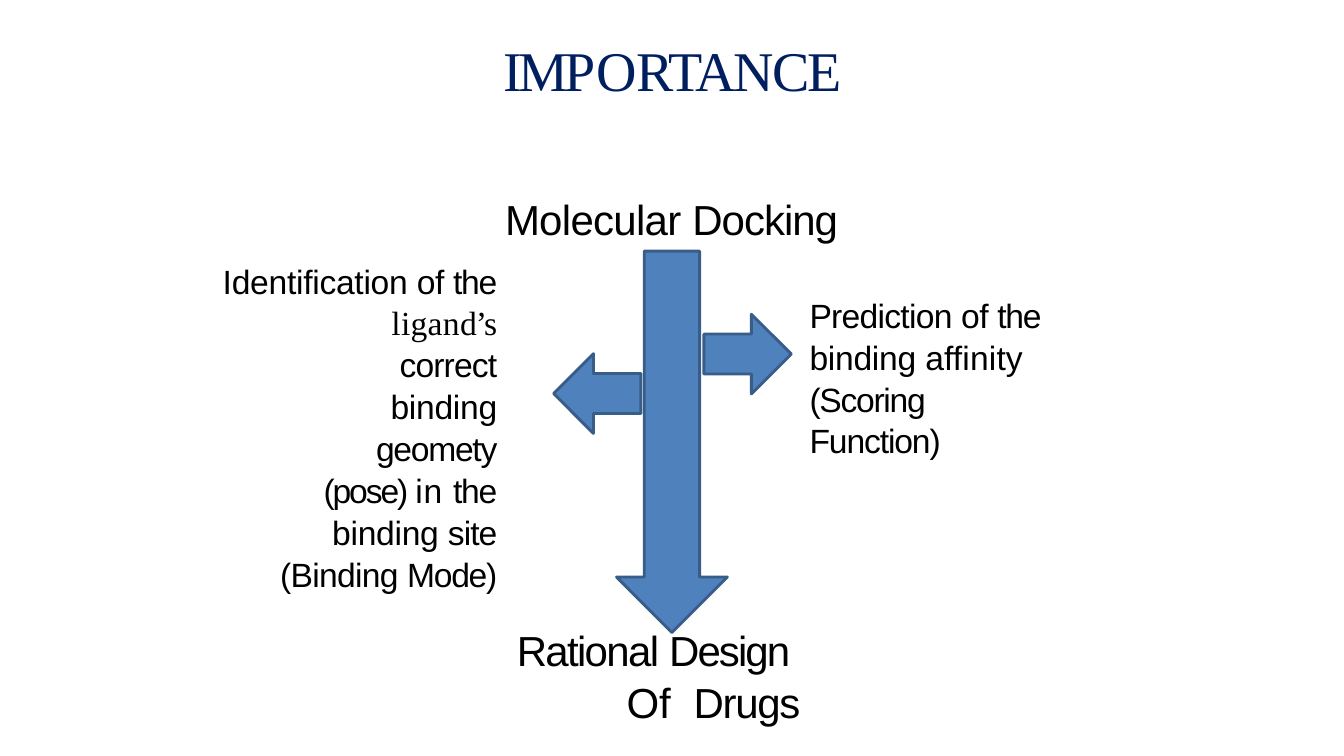
from dataclasses import dataclass

from pptx import Presentation
from pptx import util as u
from pptx.dml.color import RGBColor
from pptx.enum import shapes, text

W, H = u.Inches(13.33), u.Inches(7.5)
COLS, ROWS = 16, 9


@dataclass(frozen=True)
class Theme:
    navy: str = "001F5F"
    black: str = "000000"
    arrow: str = "4F81BC"
    outline: str = "385D89"
    sans: str = "Arial"
    serif: str = "Times New Roman"
    title: int = 40
    heading: int = 30
    body: int = 24


T = Theme()


def grid(col, row, cols, rows):
    """Turn grid columns and rows into left, top, width and height."""
    return (int(W * col / COLS), int(H * row / ROWS),
            int(W * cols / COLS), int(H * rows / ROWS))


def add_arrow(s, kind, place):
    sp = s.shapes.add_shape(kind, *grid(*place))
    sp.shadow.inherit = False
    sp.fill.solid()
    sp.fill.fore_color.rgb = RGBColor.from_string(T.arrow)
    sp.line.color.rgb = RGBColor.from_string(T.outline)
    sp.line.width = u.Pt(2.04)


def add_box(s, place, anchor=text.MSO_ANCHOR.TOP):
    tf = s.shapes.add_textbox(*grid(*place)).text_frame
    tf.word_wrap = True
    tf.vertical_anchor = anchor
    tf.margin_left = tf.margin_right = tf.margin_bottom = 0
    tf.margin_top = u.Inches(0.01)
    return tf


def add_text(tf, lines, size=T.body, color=T.black, font=T.sans, align=None,
             before=0, left=0, first=0, spacing=1.04):
    """Add one paragraph; each line lists runs of (words, tracking[, font])."""
    p = tf.paragraphs[0]
    if p.runs:
        p = tf.add_paragraph()
    p.alignment = align
    p.space_before = u.Pt(before)
    p.line_spacing = spacing
    pPr = p._p.get_or_add_pPr()
    pPr.set("marL", str(u.Inches(left)))
    pPr.set("indent", str(u.Inches(first)))
    for i, line in enumerate(lines):
        if i:
            p.add_line_break()
        for words, tracking, *face in line:
            r = p.add_run()
            r.text = words
            r.font.size = u.Pt(size)
            r.font.name = face[0] if face else font
            r.font.color.rgb = RGBColor.from_string(color)
            r.font._element.set("spc", str(round(tracking * 100)))


def add_arrows(s):
    kinds = shapes.MSO_SHAPE
    add_arrow(s, kinds.DOWN_ARROW, (7.34, 2.99, 1.32, 4.54))
    add_arrow(s, kinds.RIGHT_ARROW, (8.38, 3.74, 1.04, 0.95))
    add_arrow(s, kinds.LEFT_ARROW, (6.59, 4.21, 1.04, 0.95))


def add_texts(s):
    title = add_box(s, (5.98, 0.4, 4.04, 0.83), text.MSO_ANCHOR.MIDDLE)
    add_text(title, [[("IMP", -2.4), ("O", -2.9), ("RTANCE", -1.6)]],
             size=T.title, color=T.navy, font=T.serif, before=0.9, left=0.01,
             spacing=1.0)

    docking = add_box(s, (6, 2.27, 6.67, 2.66))
    add_text(docking, [[("Molecular ", -0.5), ("Docking", -0.7)]],
             size=T.heading, before=1, left=0.01)
    add_text(docking, [[("Prediction ", -0.5), ("of ", -0.4), ("the", -0.9)],
                       [("binding ", -0.2), ("affinity", 0.1)],
                       [("(Scoring", -0.9)],
                       [("Function)", -0.8)]], before=35, left=3.03)

    pose = add_box(s, (2.5, 3.07, 3.42, 2.93))
    right = text.PP_ALIGN.RIGHT
    add_text(pose, [[("Identification ", -0.2), ("of ", -0.4), ("the", -0.9)]],
             align=right, before=1)
    add_text(pose, [[("ligan", 0.2, T.serif), ("d’s", -0.7, T.serif)],
                    [("correct", -0.6)],
                    [("binding", -0.2)]], align=right)
    add_text(pose, [[("geomety", -0.9)],
                    [("(pose) ", -1.5), ("in ", 0.5), ("the", -0.9)],
                    [("binding ", -0.2), ("site", -0.7)],
                    [("(Binding ", -0.5), ("Mode)", -0.9)]], align=right)

    design = add_box(s, (6.14, 7.4, 3.9, 1.24))
    add_text(design, [[("Rational ", -1.2), ("Design", -1.4)],
                      [("Of", -0.2), (" ", 8), ("Drugs", -0.9)]],
             size=T.heading, before=1, left=1.1, first=-1.09)


def main():
    prs = Presentation()
    prs.slide_width, prs.slide_height = W, H
    s = prs.slides.add_slide(prs.slide_layouts[6])
    add_arrows(s)
    add_texts(s)
    prs.save("out.pptx")


if __name__ == "__main__":
    main()
